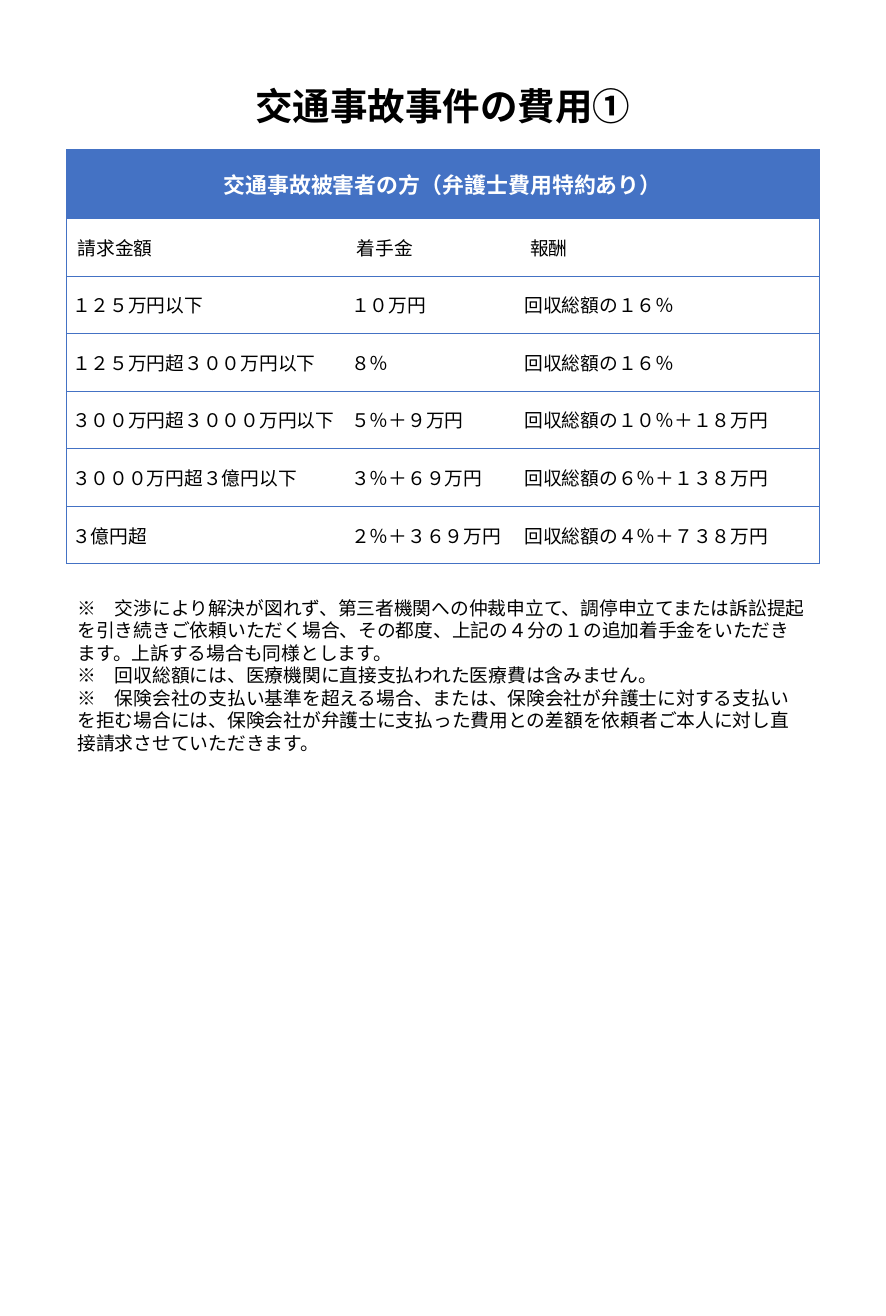
from lxml.etree import SubElement as Sub
from pptx import Presentation
from pptx.dml.color import RGBColor as Rgb
from pptx.enum.text import MSO_ANCHOR as Anchor, MSO_AUTO_SIZE as Fit, PP_ALIGN as Align
from pptx.oxml.ns import qn
from pptx.util import Pt

TITLE = "交通事故事件の費用①"
HEAD = "交通事故被害者の方（弁護士費用特約あり）"
ROWS = [
    ("請求金額", "着手金", "報酬"),
    ("１２５万円以下", "１０万円", "回収総額の１６％"),
    ("１２５万円超３００万円以下", "８％", "回収総額の１６％"),
    ("３００万円超３０００万円以下", "５％＋９万円", "回収総額の１０％＋１８万円"),
    ("３０００万円超３億円以下", "３％＋６９万円", "回収総額の６％＋１３８万円"),
    ("３億円超", "２％＋３６９万円", "回収総額の４％＋７３８万円"),
]
NOTES = [
    "※　交渉により解決が図れず、第三者機関への仲裁申立て、調停申立てまたは訴訟提起を"
    "引き続きご依頼いただく場合、その都度、上記の４分の１の追加着手金をいただきます。"
    "上訴する場合も同様とします。",
    "※　回収総額には、医療機関に直接支払われた医療費は含みません。",
    "※　保険会社の支払い基準を超える場合、または、保険会社が弁護士に対する支払いを"
    "拒む場合には、保険会社が弁護士に支払った費用との差額を依頼者ご本人に対し直接"
    "請求させていただきます。",
]

COLORS = {"blue": "4472C4", "white": "FFFFFF", "black": "000000"}
FONT = "Noto Sans CJK JP"
LEFT, WIDTH = 42.5, 481.7
COLS = (178.6, 110.9, 192.2)
HEAD_H, ROW_H = 44, 36.8


def write(frame, lines, size=12, color="black", bold=False, align=Align.LEFT, pitch=None):
    frame.word_wrap = True
    for i, line in enumerate(lines):
        para = frame.add_paragraph() if i else frame.paragraphs[0]
        para.alignment = align
        para.space_before = para.space_after = Pt(0)
        if pitch:
            para.line_spacing = Pt(pitch)
        run = para.add_run()
        run.text = line
        font = run.font
        font.name, font.size, font.bold = FONT, Pt(size), bold
        font.color.rgb = Rgb.from_string(COLORS[color])
        Sub(run._r.get_or_add_rPr(), qn("a:ea"), typeface=FONT)


def place(shape, top, height):
    shape.left, shape.top = Pt(LEFT), Pt(top)
    shape.width, shape.height = Pt(WIDTH), Pt(height)
    frame = shape.text_frame
    frame.auto_size = Fit.NONE
    frame.vertical_anchor = Anchor.TOP
    frame.margin_left = frame.margin_right = Pt(7.2)
    frame.margin_top = frame.margin_bottom = Pt(3.6)
    return frame


def edge(cell, sides):
    """Draw the named cell borders and clear the others."""
    props = cell._tc.get_or_add_tcPr()
    for side in "LRTB":
        line = Sub(props, qn(f"a:ln{side}"), w=str(Pt(0.5)))
        if side in sides:
            fill = Sub(line, qn("a:solidFill"))
            Sub(fill, qn("a:srgbClr"), val=COLORS["blue"])
        else:
            Sub(line, qn("a:noFill"))


def build(slide):
    grid = [(HEAD, "", "")] + ROWS
    height = HEAD_H + ROW_H * len(ROWS)
    table = slide.shapes.add_table(
        len(grid), len(COLS), Pt(LEFT), Pt(95.8), Pt(WIDTH), Pt(height)).table
    table.first_row = table.horz_banding = False
    for col, wide in zip(table.columns, COLS):
        col.width = Pt(wide)
    last = len(COLS) - 1
    table.cell(0, 0).merge(table.cell(0, last))
    for r, row in enumerate(grid):
        table.rows[r].height = Pt(ROW_H if r else HEAD_H)
        side, end = (3.6, 7.2) if r > 1 else (7.2, 3.6)
        for c, text in enumerate(row):
            cell = table.cell(r, c)
            cell.vertical_anchor = Anchor.MIDDLE
            cell.margin_left = cell.margin_right = Pt(side)
            cell.margin_top = cell.margin_bottom = Pt(end)
            right = c == last or cell.is_merge_origin
            edge(cell, "TB" + "L" * (c == 0) + "R" * right)
            if r:
                cell.fill.background()
                write(cell.text_frame, [text])
            else:
                cell.fill.solid()
                cell.fill.fore_color.rgb = Rgb.from_string(COLORS["blue"])
                if text:
                    write(cell.text_frame, [text], size=14, color="white",
                          bold=True, align=Align.CENTER)


def main():
    deck = Presentation()
    deck.slide_width, deck.slide_height = Pt(566.93), Pt(841.9)
    slide = deck.slides.add_slide(deck.slide_layouts[5])
    write(place(slide.shapes.title, 47.5, 36), [TITLE], size=24, bold=True,
          align=Align.CENTER, pitch=30.8)
    build(slide)
    notes = slide.shapes.add_textbox(0, 0, 0, 0)
    write(place(notes, 378, 108.7), NOTES, pitch=14.4)
    deck.save("out.pptx")


if __name__ == "__main__":
    main()
